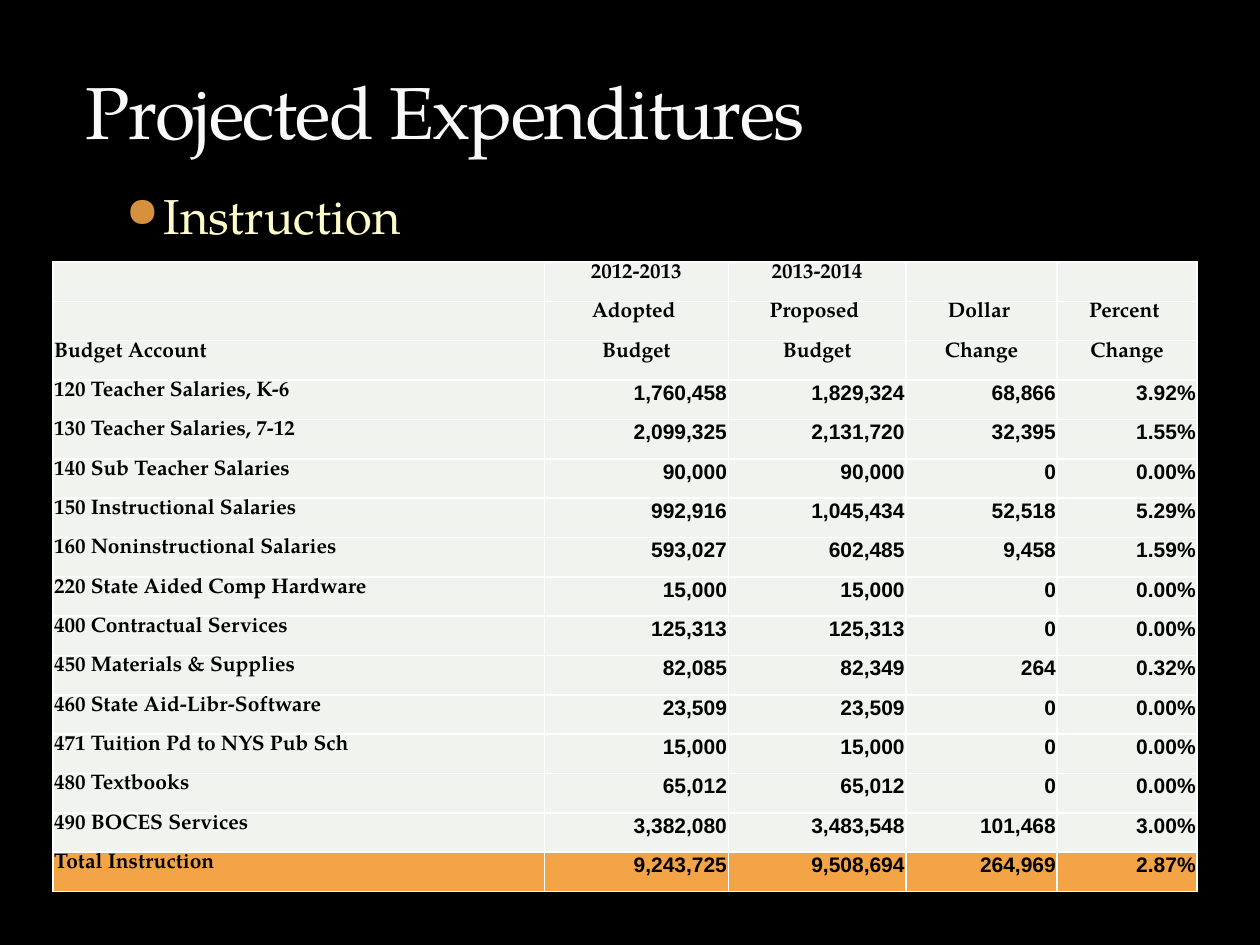
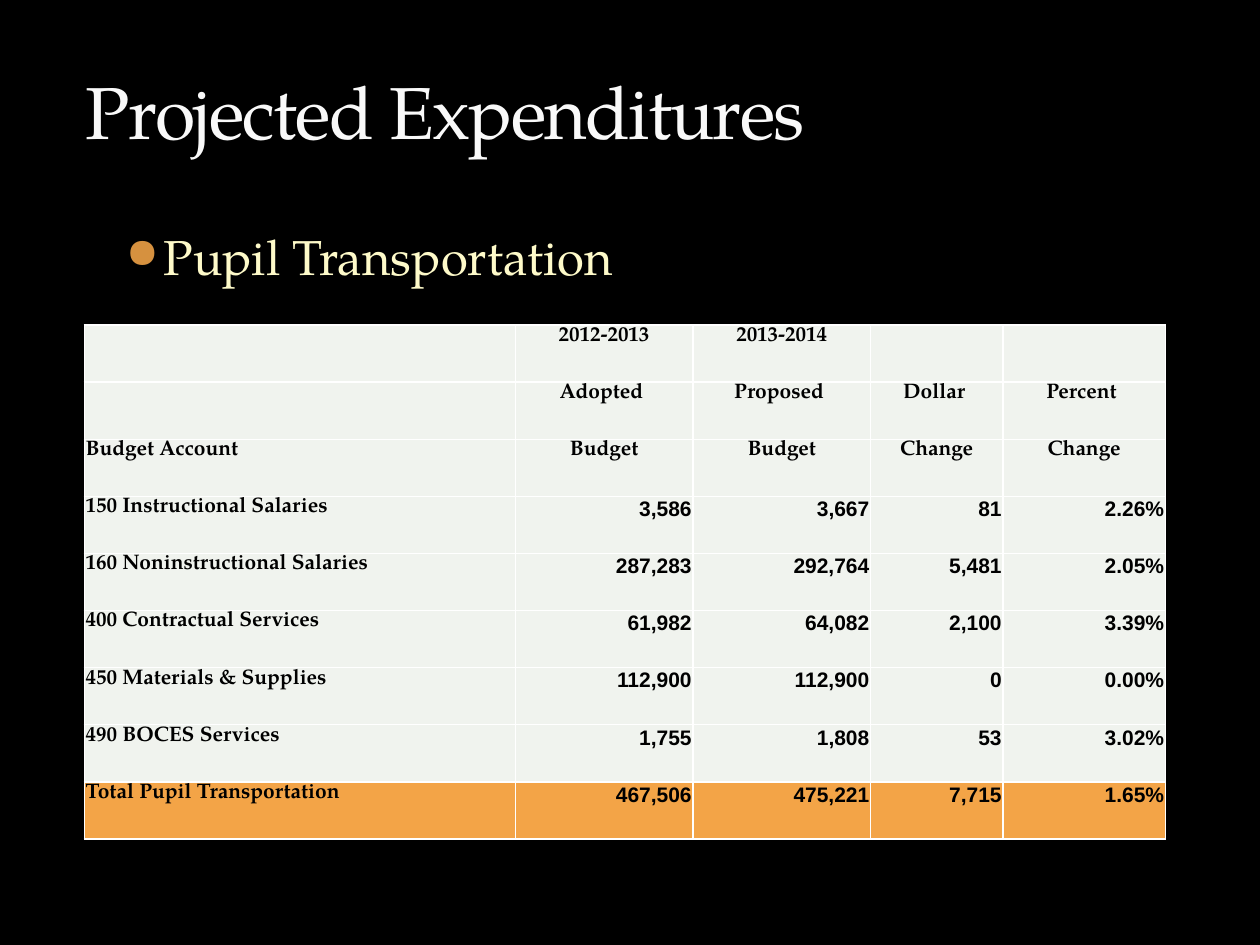
from dataclasses import dataclass

from lxml import etree
from pptx import Presentation
from pptx.dml.color import RGBColor
from pptx.enum.text import MSO_ANCHOR, PP_ALIGN
from pptx.oxml.ns import qn
from pptx.util import Inches, Pt

LEFT, MID, RIGHT = PP_ALIGN.LEFT, PP_ALIGN.CENTER, PP_ALIGN.RIGHT
BOTTOM = MSO_ANCHOR.BOTTOM


@dataclass(frozen=True)
class Theme:
    back: str = "000000"
    title: str = "F9F9F9"
    topic: str = "FEFAC9"
    bullet: str = "D6913F"
    ink: str = "000000"
    cell: str = "F0F3EE"
    total: str = "F3A447"
    rule: str = "FFFFFF"
    serif: str = "TeX Gyre Pagella"
    sans: str = "Arial"
    title_size: int = 42
    topic_size: int = 28
    cell_size: int = 12


THEME = Theme()
TITLE_BOX = (0.58, 0.42, 9, 0.85)
HEAD = [
    ("", "2012-2013", "2013-2014", "", ""),
    ("", "Adopted ", "Proposed ", "Dollar ", "Percent "),
    ("Budget Account", "Budget", "Budget", "Change", "Change"),
]
TEACHING = [
    ("120 Teacher Salaries, K-6", "1,760,458", "1,829,324", "68,866", "3.92%"),
    ("130 Teacher Salaries, 7-12", "2,099,325", "2,131,720", "32,395", "1.55%"),
    ("140 Sub Teacher Salaries", "90,000", "90,000", "0", "0.00%"),
    ("150 Instructional Salaries", "992,916", "1,045,434", "52,518", "5.29%"),
    ("160 Noninstructional Salaries", "593,027", "602,485", "9,458", "1.59%"),
    ("220 State Aided Comp Hardware", "15,000", "15,000", "0", "0.00%"),
    ("400 Contractual Services", "125,313", "125,313", "0", "0.00%"),
    ("450 Materials & Supplies", "82,085", "82,349", "264", "0.32%"),
    ("460 State Aid-Libr-Software", "23,509", "23,509", "0", "0.00%"),
    ("471 Tuition Pd to NYS Pub Sch", "15,000", "15,000", "0", "0.00%"),
    ("480 Textbooks", "65,012", "65,012", "0", "0.00%"),
    ("490 BOCES Services", "3,382,080", "3,483,548", "101,468", "3.00%"),
    ("Total Instruction", "9,243,725", "9,508,694", "264,969", "2.87%"),
]
TRANSPORT = [
    ("150 Instructional Salaries", "3,586", "3,667", "81", "2.26%"),
    ("160 Noninstructional Salaries", "287,283", "292,764", "5,481", "2.05%"),
    ("400 Contractual Services", "61,982", "64,082", "2,100", "3.39%"),
    ("450 Materials & Supplies", "112,900", "112,900", "0", "0.00%"),
    ("490 BOCES Services", "1,755", "1,808", "53", "3.02%"),
    ("Total Pupil Transportation", "467,506", "475,221", "7,715", "1.65%"),
]


def paint(fill, color):
    fill.solid()
    fill.fore_color.rgb = RGBColor.from_string(color)


def style(para, face, size, color, bold=False):
    font = para.font
    font.name, font.size, font.bold = face, Pt(size), bold
    font.color.rgb = RGBColor.from_string(color)


def add_text(slide, box, text, size, color):
    frame = slide.shapes.add_textbox(*map(Inches, box)).text_frame
    frame.word_wrap = True
    para = frame.paragraphs[0]
    para.text = text
    style(para, THEME.serif, size, color)
    return frame, para


def add_title(slide, box, text):
    frame, para = add_text(slide, box, text, THEME.title_size, THEME.title)
    frame.vertical_anchor = BOTTOM
    para.runs[0].font._element.set("spc", "-100")


def add_topic(slide, box, text):
    para = add_text(slide, box, text, THEME.topic_size, THEME.topic)[1]
    para.space_before = Pt(3)
    props = para._p.get_or_add_pPr()
    props.set("marL", str(Inches(0.7)))
    props.set("indent", str(Inches(-0.3)))
    tint = etree.Element(qn("a:buClr"))
    etree.SubElement(tint, qn("a:srgbClr"), val=THEME.bullet)
    size = etree.Element(qn("a:buSzPct"), val="85000")
    mark = etree.Element(qn("a:buChar"), char="●")
    spot = props.index(props.find(qn("a:defRPr")))
    props[spot:spot] = [tint, size, mark]


def add_rules(cell):
    props = cell._tc.get_or_add_tcPr()
    for side in ("lnL", "lnR", "lnT", "lnB"):
        line = etree.SubElement(props, qn(f"a:{side}"), w=str(Pt(1)))
        fill = etree.SubElement(line, qn("a:solidFill"))
        etree.SubElement(fill, qn("a:srgbClr"), val=THEME.rule)


def fill_cell(cell, text, face, align, color):
    cell.margin_left = cell.margin_right = cell.margin_top = Inches(0.01)
    cell.margin_bottom = 0
    add_rules(cell)
    paint(cell.fill, color)
    para = cell.text_frame.paragraphs[0]
    para.alignment = align
    style(para, face, THEME.cell_size, THEME.ink, True)
    if text:
        para.text = text
    else:
        size = str(THEME.cell_size * 100)
        etree.SubElement(para._p, qn("a:endParaRPr"), sz=size)


def add_budget(slide, box, widths, items):
    rows = HEAD + items
    frame = slide.shapes.add_table(len(rows), len(widths), *map(Inches, box))
    table = frame.table
    table.first_row = table.horz_banding = False
    for col, width in zip(table.columns, widths):
        col.width = Inches(width)
    for r, row in enumerate(rows):
        color = THEME.total if r == len(rows) - 1 else THEME.cell
        for c, text in enumerate(row):
            number = c > 0 and r >= len(HEAD)
            face = THEME.sans if number else THEME.serif
            align = RIGHT if number else MID if c else LEFT
            fill_cell(table.cell(r, c), text, face, align, color)


def add_page(deck, topic, topic_box, table_box, widths, items):
    slide = deck.slides.add_slide(deck.slide_layouts[6])
    add_topic(slide, topic_box, topic)
    add_title(slide, TITLE_BOX, "Projected Expenditures")
    add_budget(slide, table_box, widths, items)


def main():
    deck = Presentation()
    deck.slide_width, deck.slide_height = Inches(10), Inches(7.5)
    paint(deck.slide_master.background.fill, THEME.back)
    add_page(deck, "Instruction", (0.5, 1.42, 9, 5.92),
             (0.42, 2.08, 9.08, 5), (3.9, 1.46, 1.41, 1.2, 1.11), TEACHING)
    add_page(deck, "Pupil Transportation", (0.5, 1.75, 9, 5.58),
             (0.67, 2.58, 8.58, 4.08), (3.42, 1.41, 1.41, 1.05, 1.29), TRANSPORT)
    deck.save("out.pptx")


if __name__ == "__main__":
    main()
